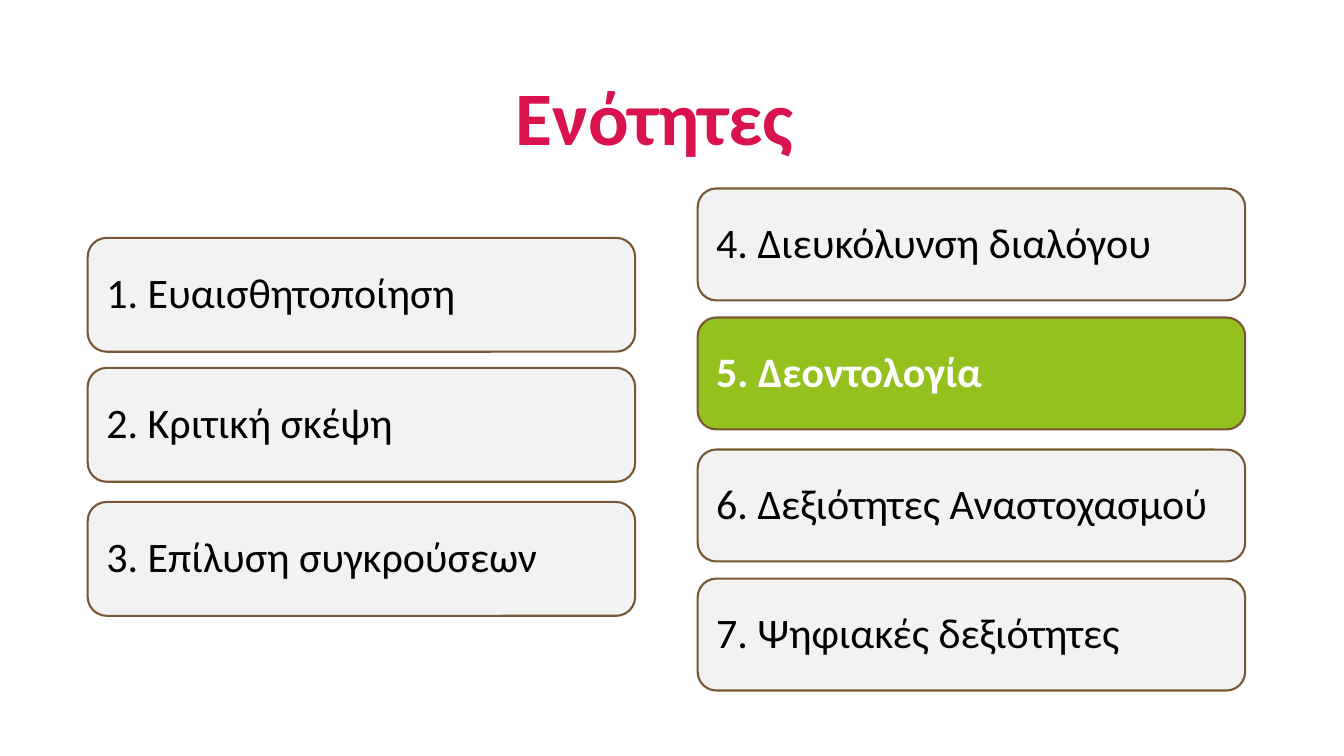
from dataclasses import dataclass

from pptx import Presentation
from pptx import util as u
from pptx.dml.color import RGBColor
from pptx.enum import shapes, text

FONT = "Calibri"
BOX_WIDTH = 5.43
INSET = 0.13


@dataclass(frozen=True)
class Unit:
    label: str
    top: float
    current: bool = False


@dataclass(frozen=True)
class Column:
    left: float
    box_height: float
    units: tuple[Unit, ...]


COLUMNS = (
    Column(0.87, 1.13, (
        Unit("1. Ευαισθητοποίηση", 2.36),
        Unit("2. Κριτική σκέψη", 3.65),
        Unit("3. Επίλυση συγκρούσεων", 4.98),
    )),
    Column(6.92, 1.11, (
        Unit("4. Διευκόλυνση διαλόγου", 1.87),
        Unit("5. Δεοντολογία", 3.15, current=True),
        Unit("6. Δεξιότητες Αναστοχασμού", 4.46),
        Unit("7. Ψηφιακές δεξιότητες", 5.74),
    )),
)


def color(value: str) -> RGBColor:
    return RGBColor.from_string(value)


def write(frame, words: str, size: int, ink: str, bold: bool, align) -> None:
    frame.word_wrap = True
    frame.text = words
    para = frame.paragraphs[0]
    para.alignment = align
    para.line_spacing = 0.9
    font = para.runs[0].font
    font.name = FONT
    font.size = u.Pt(size)
    font.bold = bold
    font.color.rgb = color(ink)


def add_title(page, words: str) -> None:
    box = page.shapes.add_textbox(
        u.Inches(0.01), u.Inches(-0.3), u.Inches(12.97), u.Inches(1.95))
    frame = box.text_frame
    frame.vertical_anchor = text.MSO_ANCHOR.BOTTOM
    write(frame, words, 54, "D8134D", True, text.PP_ALIGN.CENTER)


def add_unit(page, column: Column, unit: Unit) -> None:
    box = page.shapes.add_shape(
        shapes.MSO_SHAPE.ROUNDED_RECTANGLE,
        u.Inches(column.left), u.Inches(unit.top),
        u.Inches(BOX_WIDTH), u.Inches(column.box_height))
    box.shadow.inherit = False
    box.fill.solid()
    box.fill.fore_color.rgb = color("95C11F" if unit.current else "F2F2F2")
    box.line.color.rgb = color("785832")
    box.line.width = u.Pt(1.5)
    frame = box.text_frame
    frame.margin_left = frame.margin_right = u.Inches(INSET)
    frame.margin_top = frame.margin_bottom = u.Inches(INSET)
    frame.vertical_anchor = text.MSO_ANCHOR.MIDDLE
    ink = "FFFFFF" if unit.current else "000000"
    write(frame, unit.label, 30, ink, unit.current, text.PP_ALIGN.LEFT)


def main() -> None:
    deck = Presentation()
    deck.slide_width = u.Inches(13.33)
    deck.slide_height = u.Inches(7.5)
    page = deck.slides.add_slide(deck.slide_layouts[6])
    add_title(page, "Ενότητες")
    for column in COLUMNS:
        for unit in column.units:
            add_unit(page, column, unit)
    deck.save("out.pptx")


if __name__ == "__main__":
    main()
